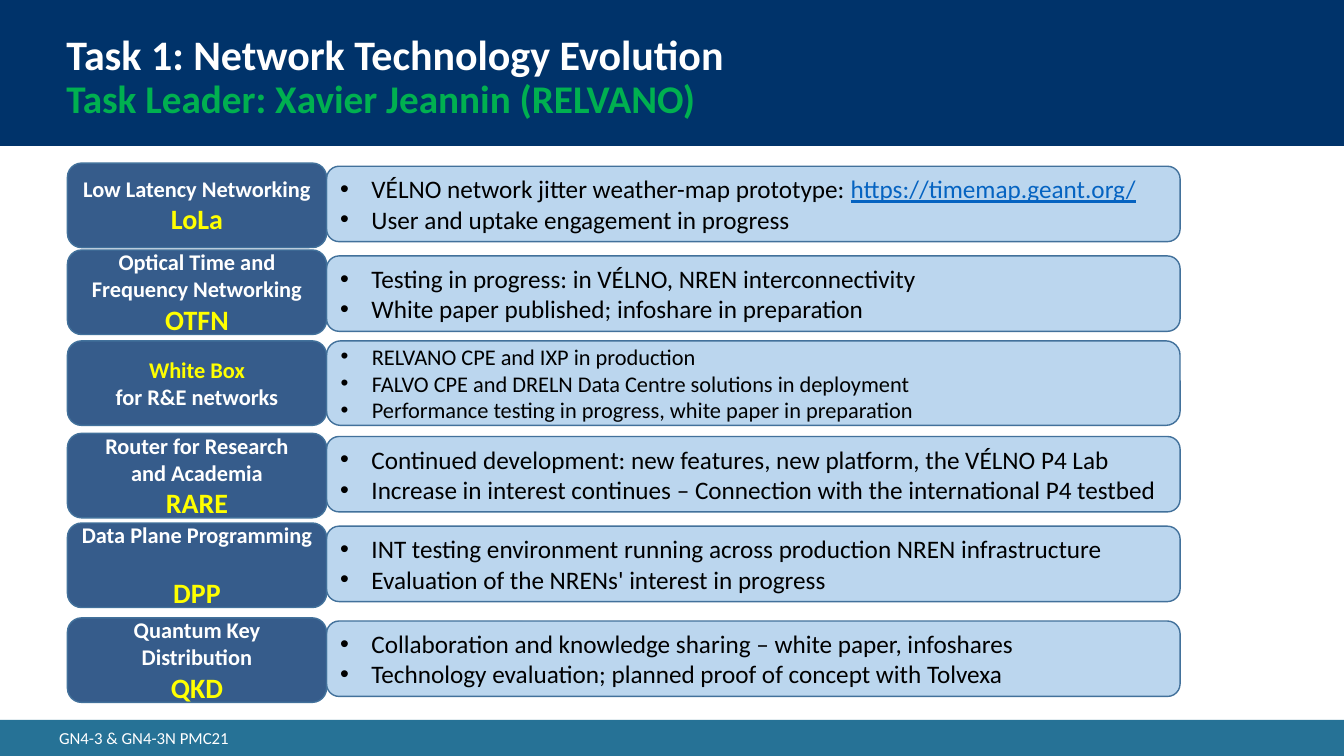
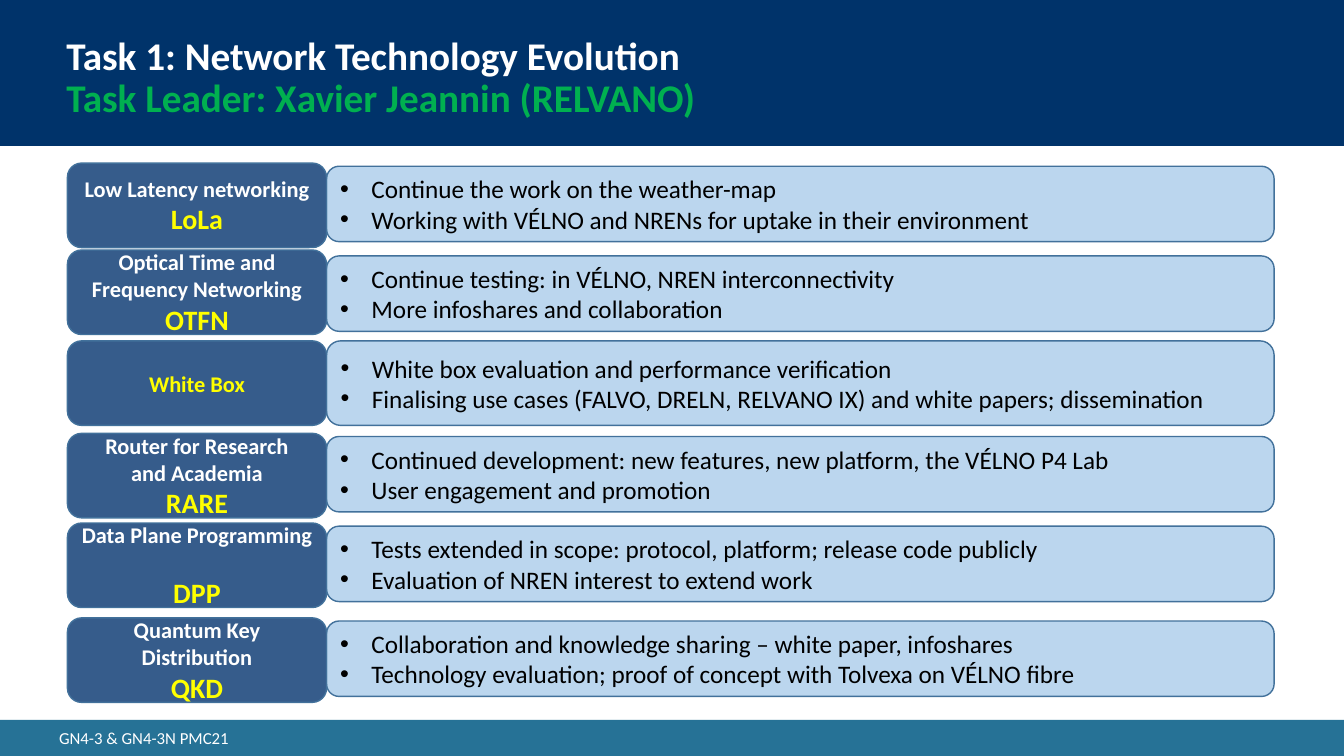
from dataclasses import dataclass

from lxml import etree
from pptx import Presentation
from pptx.dml.color import RGBColor
from pptx.enum.shapes import MSO_SHAPE, PP_PLACEHOLDER
from pptx.enum.text import MSO_ANCHOR, MSO_AUTO_SIZE, PP_ALIGN
from pptx.oxml.ns import qn
from pptx.util import Cm, Pt

RECTANGLE = MSO_SHAPE.RECTANGLE
ROUNDED = MSO_SHAPE.ROUNDED_RECTANGLE
TITLE = PP_PLACEHOLDER.TITLE
MIDDLE = MSO_ANCHOR.MIDDLE
NO_FIT = MSO_AUTO_SIZE.NONE
LEFT = PP_ALIGN.LEFT
CENTER = PP_ALIGN.CENTER


@dataclass(frozen=True)
class Theme:
    font: str = "Calibri"
    header: str = "00336A"
    footer: str = "267296"
    label: str = "365C8B"
    panel: str = "BBD6EE"
    outline: str = "42719B"
    black: str = "000000"
    white: str = "FFFFFF"
    yellow: str = "FFFF00"
    green: str = "00B050"
    link: str = "0563C1"
    title_large: int = 30
    title: int = 28
    code: int = 20
    body: int = 18
    small: int = 16
    note: int = 12

    def text(self, size, color, **extra):
        return {"name": self.font, "size": Pt(size), "color": color, **extra}


THEME = Theme()
TOPIC = THEME.text(THEME.small, THEME.white, bold=True)
ACCENT = THEME.text(THEME.small, THEME.yellow, bold=True)
CODE = THEME.text(THEME.code, THEME.yellow, bold=True)
BODY = THEME.text(THEME.body, THEME.black)
BODY_SMALL = THEME.text(THEME.small, THEME.black)
LINK = THEME.text(THEME.body, THEME.link, underline=True)
NOTE = THEME.text(THEME.note, THEME.white)
LEADER = THEME.text(THEME.title, THEME.green, bold=True)

LABEL_LEFT, LABEL_WIDTH, LABEL_HEIGHT = 1.7, 6.53, 2.13
PANEL_LEFT = LABEL_LEFT + LABEL_WIDTH
PANEL_HEIGHT = 1.9
ROWS = [
    (4.11, 4.19, PANEL_HEIGHT),
    (6.3, 6.45, PANEL_HEIGHT),
    (8.59, 8.59, LABEL_HEIGHT),
    (10.92, 11.0, PANEL_HEIGHT),
    (13.18, 13.26, PANEL_HEIGHT),
    (15.57, 15.65, PANEL_HEIGHT),
]

OTFN = [("Optical Time and Frequency Networking", TOPIC), ("OTFN", CODE)]
RARE = [("Router for Research", TOPIC), ("and Academia", TOPIC), ("RARE", CODE)]
DPP = [("Data Plane Programming", TOPIC), ("DPP", CODE)]
QKD = [("Quantum Key Distribution", TOPIC), ("QKD", CODE)]
GAPS = {"DPP": Pt(19.5)}

PROGRESS = [
    ([("Low Latency Networking", TOPIC), ("LoLa", CODE)], BODY, [
        [("VÉLNO network jitter weather-map prototype: ", BODY),
         ("https://timemap.geant.org/", LINK)],
        "User and uptake engagement in progress"]),
    (OTFN, BODY, [
        "Testing in progress: in VÉLNO, NREN interconnectivity",
        "White paper published; infoshare in preparation"]),
    ([("White Box", ACCENT), ("for R&E networks", TOPIC)], BODY_SMALL, [
        "RELVANO CPE and IXP in production",
        "FALVO CPE and DRELN Data Centre solutions in deployment",
        "Performance testing in progress, white paper in preparation"]),
    (RARE, BODY, [
        "Continued development: new features, new platform, the VÉLNO P4 Lab",
        "Increase in interest continues – Connection with the international P4 testbed"]),
    (DPP, BODY, [
        "INT testing environment running across production NREN infrastructure",
        "Evaluation of the NRENs' interest in progress"]),
    (QKD, BODY, [
        "Collaboration and knowledge sharing – white paper, infoshares",
        "Technology evaluation; planned proof of concept with Tolvexa"]),
]
PLANS = [
    ([("Low Latency networking", TOPIC), ("LoLa", CODE)], BODY, [
        "Continue the work on the weather-map",
        "Working with VÉLNO and NRENs for uptake in their environment"]),
    (OTFN, BODY, [
        "Continue testing: in VÉLNO, NREN interconnectivity",
        "More infoshares and collaboration"]),
    ([("White Box", ACCENT)], BODY, [
        "White box evaluation and performance verification",
        "Finalising use cases (FALVO, DRELN, RELVANO IX) and white papers; dissemination"]),
    (RARE, BODY, [
        "Continued development: new features, new platform, the VÉLNO P4 Lab",
        "User engagement and promotion"]),
    (DPP, BODY, [
        "Tests extended in scope: protocol, platform; release code publicly",
        "Evaluation of NREN interest to extend work"]),
    (QKD, BODY, [
        "Collaboration and knowledge sharing – white paper, infoshares",
        "Technology evaluation; proof of concept with Tolvexa on VÉLNO fibre"]),
]


def add_span(para, text, style):
    span = para.add_run()
    span.text = text
    for name, value in style.items():
        if name == "color":
            span.font.color.rgb = RGBColor.from_string(value)
        else:
            setattr(span.font, name, value)


def add_bullet(para):
    properties = para._p.get_or_add_pPr()
    indent = Cm(0.79)
    properties.set("marL", str(indent))
    properties.set("indent", str(-indent))
    color = etree.SubElement(properties, qn("a:buClr"))
    etree.SubElement(color, qn("a:srgbClr")).set("val", THEME.black)
    etree.SubElement(properties, qn("a:buFont")).set("typeface", "Arial")
    etree.SubElement(properties, qn("a:buChar")).set("char", "•")


def write(box, lines, bulleted=False, gaps=None, **layout):
    frame = box.text_frame
    frame.word_wrap = True
    frame.auto_size = NO_FIT
    frame.vertical_anchor = MIDDLE
    for index, spans in enumerate(lines):
        para = frame.add_paragraph() if index else frame.paragraphs[0]
        for name, value in layout.items():
            setattr(para, name, value)
        gap = (gaps or {}).get(spans[0][0])
        if gap:
            para.space_before = gap
        if bulleted:
            add_bullet(para)
        for text, style in spans:
            add_span(para, text, style)


def add_block(page, kind, place, fill, outline=None):
    block = page.shapes.add_shape(kind, *map(Cm, place))
    block.shadow.inherit = False
    block.fill.solid()
    block.fill.fore_color.rgb = RGBColor.from_string(fill)
    if outline:
        block.line.color.rgb = RGBColor.from_string(outline)
        block.line.width = Pt(1)
    else:
        block.line.fill.background()
    return block


def add_bands(page):
    header = add_block(page, RECTANGLE, (0, 0, 33.87, 3.68), THEME.header)
    footer = add_block(page, RECTANGLE, (0, 18.14, 33.87, 0.91), THEME.footer)
    note = page.shapes.add_textbox(*map(Cm, (1.24, 18.2, 4.85, 0.76)))
    write(note, [[("GN4-3 & GN4-3N PMC21", NOTE)]], alignment=LEFT)
    layout = page.slide_layout
    for placeholder in list(layout.placeholders):
        if placeholder.placeholder_format.type != TITLE:
            layout.shapes.element.remove(placeholder._element)
    for index, shape in enumerate((header, footer, note), start=2):
        layout.shapes.element.insert(index, shape._element)


def set_title(page, size):
    title = page.shapes.title
    place = {"left": 1.42, "top": 0.81, "width": 23.88, "height": 2.34}
    for name, value in place.items():
        setattr(title, name, Cm(value))
    heading = THEME.text(size, THEME.white, bold=True)
    write(title, [
        [("Task 1: Network Technology Evolution", heading)],
        [("Task Leader: Xavier Jeannin (RELVANO)", LEADER)],
    ], alignment=LEFT, line_spacing=0.9)


def add_topic(page, row, width, topic):
    label_top, panel_top, panel_height = row
    label_lines, style, points = topic
    panel = add_block(page, ROUNDED, (PANEL_LEFT, panel_top, width, panel_height),
                      THEME.panel, THEME.outline)
    lines = [[(point, style)] if isinstance(point, str) else point for point in points]
    write(panel, lines, bulleted=True, alignment=LEFT)
    label = add_block(page, ROUNDED, (LABEL_LEFT, label_top, LABEL_WIDTH, LABEL_HEIGHT),
                      THEME.label, THEME.outline)
    write(label, [[line] for line in label_lines], gaps=GAPS, alignment=CENTER)


def main():
    deck = Presentation()
    deck.slide_width, deck.slide_height = Cm(33.87), Cm(19.05)
    layout = deck.slide_layouts[5]
    contents = [
        (THEME.title_large, 21.51, PROGRESS),
        (THEME.title, 23.88, PLANS),
    ]
    for number, (title_size, panel_width, topics) in enumerate(contents):
        page = deck.slides.add_slide(layout)
        if number == 0:
            add_bands(page)
        set_title(page, title_size)
        for row, topic in zip(ROWS, topics):
            add_topic(page, row, panel_width, topic)
    deck.save("out.pptx")


if __name__ == "__main__":
    main()
